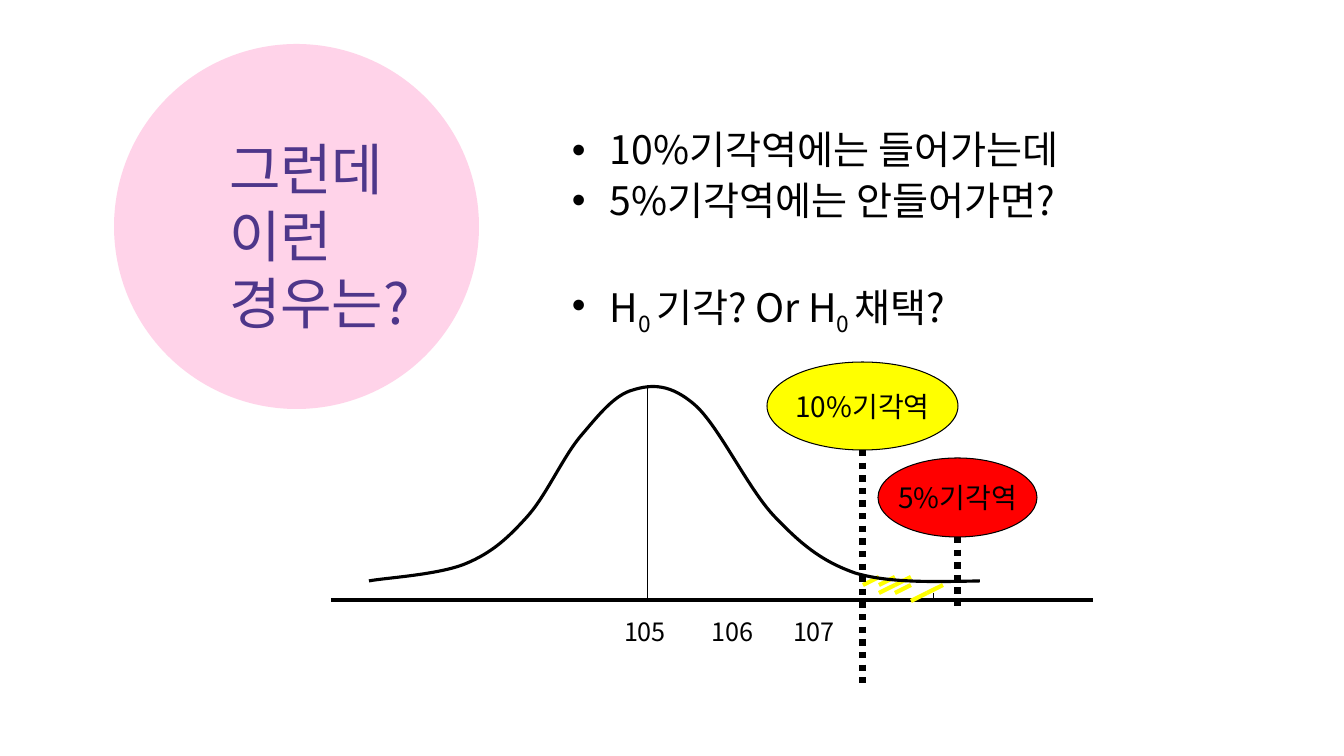
from lxml import etree
from pptx import Presentation
from pptx.dml.color import RGBColor
from pptx.enum.dml import MSO_LINE
from pptx.enum.shapes import MSO_CONNECTOR, MSO_SHAPE
from pptx.enum.text import MSO_ANCHOR, MSO_AUTO_SIZE, PP_ALIGN
from pptx.oxml.ns import qn
from pptx.util import Pt

PX = 914400 / 100.8
FONT = "Noto Sans CJK KR"
COLORS = {"black": "000000", "pink": "FF99CC", "purple": "4E368A",
          "yellow": "FFFF00", "red": "FF0000"}
OVAL = MSO_SHAPE.OVAL
STRAIGHT = MSO_CONNECTOR.STRAIGHT
DOTTED = MSO_LINE.ROUND_DOT
TOP, MIDDLE = MSO_ANCHOR.TOP, MSO_ANCHOR.MIDDLE
LEFT, CENTER = PP_ALIGN.LEFT, PP_ALIGN.CENTER
NO_FIT = MSO_AUTO_SIZE.NONE


def px(*lengths):
    return [round(length * PX) for length in lengths]


def color(name):
    return RGBColor.from_string(COLORS[name])


def style_text(shape, size, name="black", align=LEFT, anchor=TOP, wrap=True):
    frame = shape.text_frame
    frame.auto_size = NO_FIT
    frame.word_wrap = wrap
    frame.vertical_anchor = anchor
    for paragraph in frame.paragraphs:
        paragraph.alignment = align
        for run in paragraph.runs:
            run.font.size = Pt(size)
            run.font.name = FONT
            run.font.color.rgb = color(name)
    for props in shape.element.iter(qn("a:rPr")):
        etree.SubElement(props, qn("a:ea")).set("typeface", FONT)


def add_oval(slide, box, fill, outlined=True):
    oval = slide.shapes.add_shape(OVAL, *px(*box))
    oval.shadow.inherit = False
    oval.fill.solid()
    oval.fill.fore_color.rgb = color(fill)
    if outlined:
        oval.line.color.rgb = color("black")
        oval.line.width = Pt(0.75)
    else:
        oval.line.fill.background()
    return oval


def add_line(slide, start, end, width, name="black", dash=None):
    line = slide.shapes.add_connector(STRAIGHT, *px(*start, *end))
    line.line.color.rgb = color(name)
    line.line.width = Pt(width)
    if dash:
        line.line.dash_style = dash
    etree.SubElement(line.element.spPr, qn("a:effectLst"))


def add_curve(slide, points, width):
    """Cubic curve: a start, then two control points and an end per piece."""
    outline = slide.shapes.build_freeform(*points[0], scale=1.0)
    outline.add_line_segments(points[1:], close=False)
    curve = outline.convert_to_shape()
    curve.shadow.inherit = False
    curve.fill.background()
    curve.line.color.rgb = color("black")
    curve.line.width = Pt(width)
    segments = list(curve.element.iter(qn("a:lnTo")))
    for first in range(0, len(segments), 3):
        piece = etree.Element(qn("a:cubicBezTo"))
        segments[first].addprevious(piece)
        for segment in segments[first:first + 3]:
            piece.append(segment[0])
            segment.getparent().remove(segment)


def add_title(slide, box):
    x, y, size = box
    title = slide.shapes.title
    circle = add_oval(slide, (x, y, size, size), "pink", outlined=False)
    fill_color = circle.element.spPr.find(qn("a:solidFill"))[0]
    etree.SubElement(fill_color, qn("a:alpha")).set("val", "43000")
    title.element.addprevious(circle.element)

    title.left, title.top, title.width, title.height = px(x + 105, y + 33, 279, 316)
    title.text_frame.text = "그런데\v이런\v경우는?"
    title.text_frame.paragraphs[0].line_spacing = 1.0
    style_text(title, 40, "purple", anchor=MIDDLE)


def add_questions(slide, box):
    # Each bullet: space before in points, then (text, is subscript) parts
    bullets = [
        (0, [("10%기각역에는 들어가는데", False)]),
        (5.6, [("5%기각역에는 안들어가면?", False)]),
        (43, [("H", False), ("0 ", True), ("기각? Or H", False),
              ("0 ", True), ("채택?", False)]),
    ]
    questions = slide.shapes.add_textbox(*px(*box))
    frame = questions.text_frame
    for index, (gap, parts) in enumerate(bullets):
        paragraph = frame.add_paragraph() if index else frame.paragraphs[0]
        paragraph.line_spacing = 0.9
        paragraph.space_before = Pt(gap)
        props = paragraph._p.get_or_add_pPr()
        indent = px(38)[0]
        props.set("marL", str(indent))
        props.set("indent", str(-indent))
        etree.SubElement(props, qn("a:buFont")).set("typeface", "Arial")
        etree.SubElement(props, qn("a:buChar")).set("char", "•")
        for text, subscript in parts:
            run = paragraph.add_run()
            run.text = text
            if subscript:
                run.font._element.set("baseline", "-25000")
    style_text(questions, 28)


def add_distribution(slide, box):
    left, top, width, height = box
    axis_y = top + 238

    # Axis, its values and the mean
    add_line(slide, (left, axis_y), (left + width, axis_y), 3)
    for value, center in (("105", 314), ("106", 402), ("107", 483)):
        label = slide.shapes.add_textbox(*px(left + center - 35, axis_y + 11, 70, 40))
        label.text_frame.text = value
        style_text(label, 18, align=CENTER, wrap=False)
    add_line(slide, (left + 317, top + 24), (left + 317, axis_y), 0.75)

    # Hatching of the rejection region, by column and row
    for column, row in ((0, 0), (1, 0), (1, 1), (2, 1), (3, 2), (4, 1), (2, 0)):
        x, y = left + 532 + 16 * column, top + 215 + 8 * row
        add_line(slide, (x + 16, y), (x, y + 8), 3, "yellow")

    # Badges with their critical-value lines
    for text, fill, x, y, w, h, line_end in (
            ("10%기각역", "yellow", 436, 0, 191, 88, height),
            ("5%기각역", "red", 547, 96, 159, 79, 246)):
        middle = left + x + w / 2
        add_line(slide, (middle, top + y + h), (middle, top + line_end), 4.5, dash=DOTTED)
        badge = add_oval(slide, (left + x, top + y, w, h), fill)
        badge.text_frame.text = text
        style_text(badge, 20, align=CENTER, anchor=MIDDLE, wrap=False)
    add_line(slide, (left + 603, axis_y - 7), (left + 603, axis_y), 0.75)

    # Bell curve
    bell = [(38, 219),
            (53, 216), (107, 213), (134, 202),
            (161, 191), (177, 176), (196, 155),
            (215, 134), (231, 97), (249, 75),
            (267, 54), (283, 33), (302, 28),
            (321, 22), (340, 22), (364, 43),
            (388, 64), (417, 127), (444, 155),
            (470, 182), (490, 199), (524, 211),
            (557, 221), (602, 220), (649, 219)]
    add_curve(slide, [px(left + x, top + y) for x, y in bell], 2.25)


def main():
    deck = Presentation()
    deck.slide_width, deck.slide_height = px(1344, 756)
    slide = deck.slides.add_slide(deck.slide_layouts[5])
    add_title(slide, (114, 44, 365))
    add_questions(slide, (562, 126, 555, 188))
    add_distribution(slide, (331, 362, 762, 326))
    deck.save("out.pptx")


if __name__ == "__main__":
    main()
